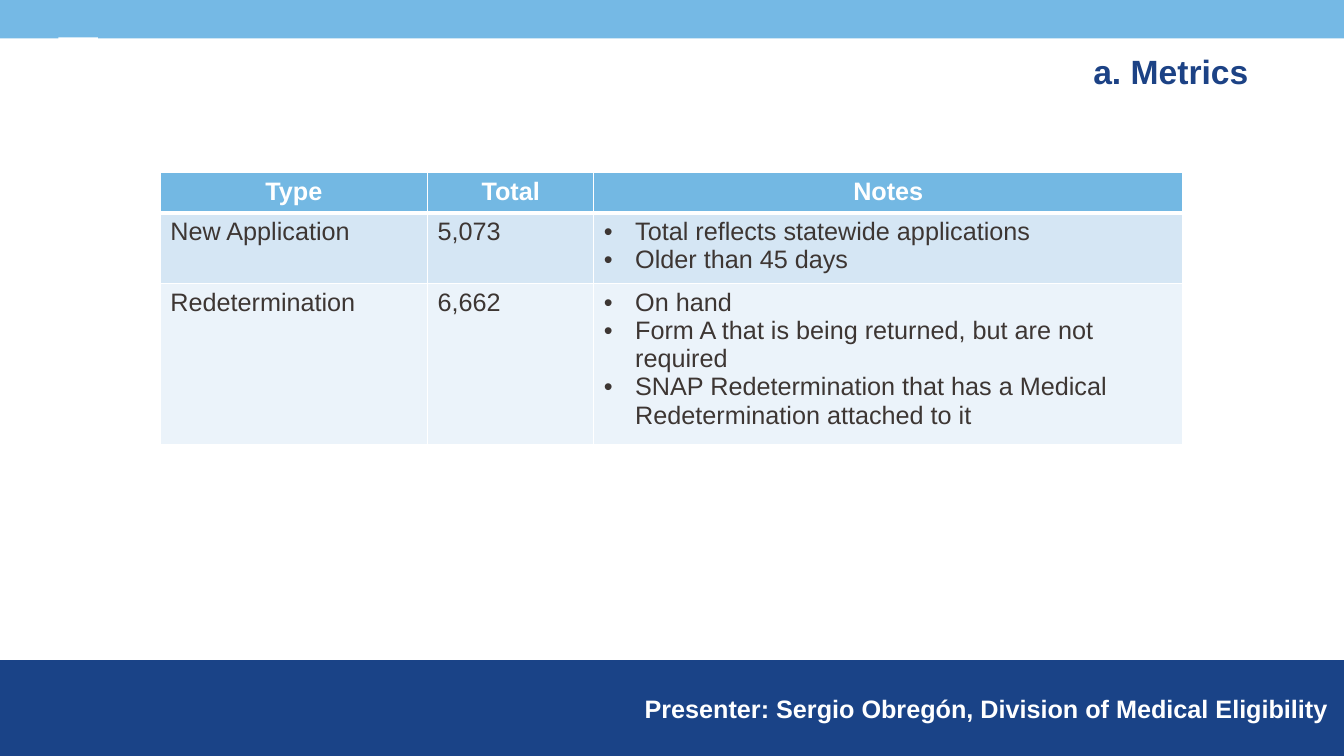
from lxml import etree
from pptx import Presentation
from pptx.dml.color import RGBColor
from pptx.enum.shapes import MSO_SHAPE
from pptx.enum.text import PP_ALIGN
from pptx.oxml.ns import qn
from pptx.util import Inches, Pt

RECTANGLE = MSO_SHAPE.RECTANGLE
LEFT, CENTER, RIGHT = PP_ALIGN.LEFT, PP_ALIGN.CENTER, PP_ALIGN.RIGHT

WHITE = RGBColor(0xFF, 0xFF, 0xFF)
NAVY = RGBColor(0x1A, 0x43, 0x87)
SKY = RGBColor(0x75, 0xB9, 0xE5)
TITLE_BLUE = RGBColor(0x1C, 0x42, 0x85)
HEADER_BLUE = RGBColor(0x73, 0xB8, 0xE3)
INK = RGBColor(0x3D, 0x36, 0x33)
ROW_TINTS = [RGBColor(0xD5, 0xE6, 0xF4), RGBColor(0xEB, 0xF3, 0xFA)]

TITLE = "a. Metrics"
PRESENTER = "Presenter: Sergio Obregón, Division of Medical Eligibility"
HEADINGS = ["Type", "Total", "Notes"]
METRICS = [
    ("New Application", "5,073", [
        "Total reflects statewide applications",
        "Older than 45 days",
    ]),
    ("Redetermination", "6,662", [
        "On hand",
        "Form A that is being returned, but are not required",
        "SNAP Redetermination that has a Medical Redetermination attached to it",
    ]),
]

SLIDE_W, SLIDE_H = 13.33, 7.5
FOOTER_TOP = 6.55
BANDS = [
    (0, FOOTER_TOP, SLIDE_W, SLIDE_H - FOOTER_TOP, NAVY),
    (0, 0, SLIDE_W, 0.38, SKY),
    (0.58, 0.37, 0.39, 0.41, WHITE),
]
LABELS = [
    (TITLE, (0.15, 0.46, 12.33, 0.5), 24, TITLE_BLUE),
    (PRESENTER, (5.05, 6.83, 8.22, 0.4), 18, WHITE),
]
TABLE_LEFT, TABLE_TOP = 1.59, 1.71
COLUMN_WIDTHS = [2.65, 1.65, 5.84]
ROW_HEIGHTS = [0.4, 0.7, 1.6]
BULLET_INDENT = Inches(0.31)


def style(paragraph, size, color, bold, align):
    paragraph.alignment = align
    font = paragraph.font
    font.name, font.size, font.bold = "Arial", Pt(size), bold
    font.color.rgb = color


def add_bullet(paragraph):
    properties = paragraph._p.get_or_add_pPr()
    properties.set("marL", str(BULLET_INDENT))
    properties.set("indent", str(-BULLET_INDENT))
    etree.SubElement(properties, qn("a:buFont")).set("typeface", "Arial")
    etree.SubElement(properties, qn("a:buChar")).set("char", "•")


def add_borders(cell, widths):
    properties = cell._tc.get_or_add_tcPr()
    for position, (side, width) in enumerate(widths.items()):
        line = etree.Element(qn(f"a:ln{side}"), w=str(Pt(width)))
        fill = etree.SubElement(line, qn("a:solidFill"))
        etree.SubElement(fill, qn("a:srgbClr")).set("val", str(WHITE))
        properties.insert(position, line)


def fill_cell(cell, content, tint, heading, row):
    cell.fill.solid()
    cell.fill.fore_color.rgb = tint
    add_borders(cell, {"L": 1, "R": 1, "T": 3 if row == 1 else 1, "B": 3 if heading else 1})
    bulleted = isinstance(content, list)
    cell.text = "\n".join(content) if bulleted else content
    for paragraph in cell.text_frame.paragraphs:
        if bulleted:
            add_bullet(paragraph)
        style(paragraph, 18, WHITE if heading else INK, heading, CENTER if heading else LEFT)


def add_metrics_table(slide):
    table = slide.shapes.add_table(
        len(ROW_HEIGHTS), len(COLUMN_WIDTHS), Inches(TABLE_LEFT), Inches(TABLE_TOP),
        Inches(sum(COLUMN_WIDTHS)), Inches(sum(ROW_HEIGHTS))).table
    for column, width in zip(table.columns, COLUMN_WIDTHS):
        column.width = Inches(width)
    for table_row, height in zip(table.rows, ROW_HEIGHTS):
        table_row.height = Inches(height)
    for row, contents in enumerate([HEADINGS, *METRICS]):
        tint = [HEADER_BLUE, *ROW_TINTS][row]
        for column, content in enumerate(contents):
            fill_cell(table.cell(row, column), content, tint, row == 0, row)


def main():
    deck = Presentation()
    deck.slide_width, deck.slide_height = Inches(SLIDE_W), Inches(SLIDE_H)
    slide = deck.slides.add_slide(deck.slide_layouts[6])
    for *box, color in BANDS:
        band = slide.shapes.add_shape(RECTANGLE, *map(Inches, box))
        band.shadow.inherit = False
        band.fill.solid()
        band.fill.fore_color.rgb = color
        band.line.fill.background()
    for wording, box, size, color in LABELS:
        frame = slide.shapes.add_textbox(*map(Inches, box)).text_frame
        frame.word_wrap = True
        frame.text = wording
        style(frame.paragraphs[0], size, color, True, RIGHT)
    add_metrics_table(slide)
    deck.save("out.pptx")


if __name__ == "__main__":
    main()
